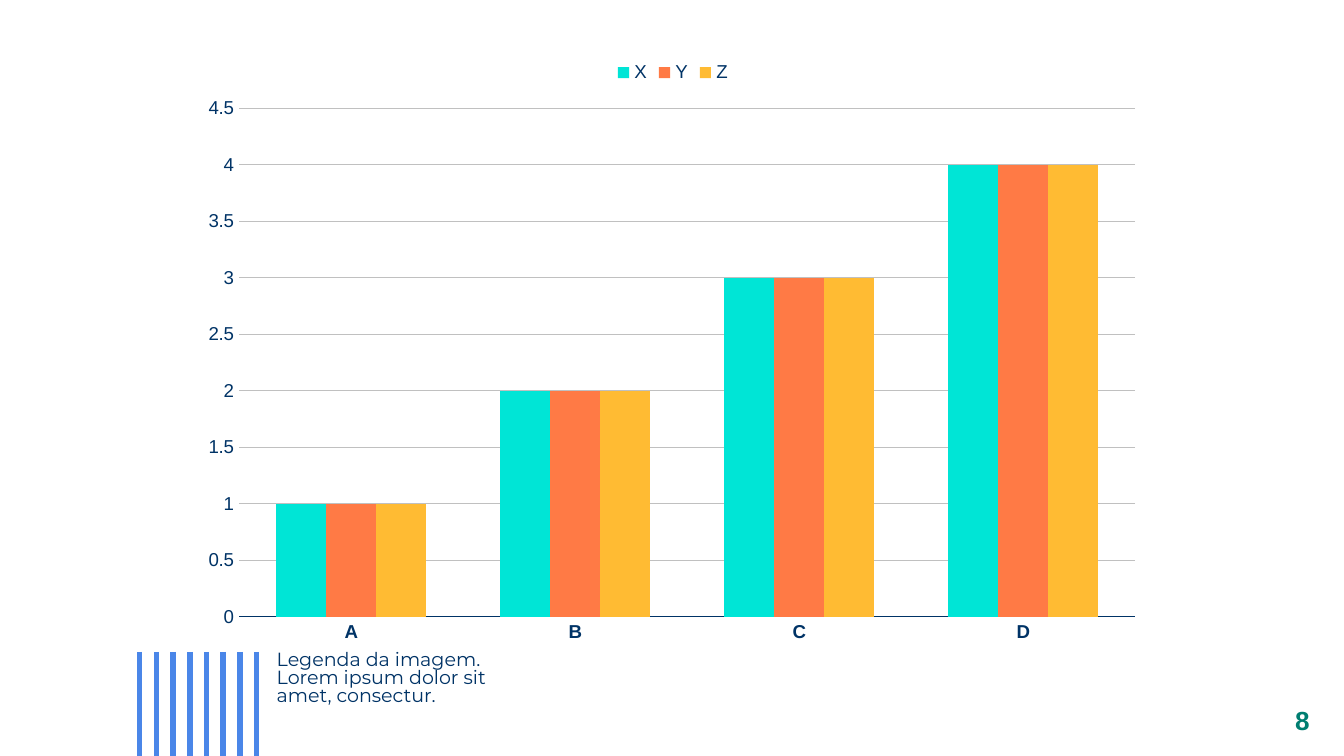
"""Build a slide with a clustered column chart, its caption, a stripe motif and a page number."""
import lxml.etree
import pptx
import pptx.chart.data
import pptx.dml.color
import pptx.enum.chart
import pptx.enum.shapes
import pptx.enum.text
import pptx.oxml.ns
import pptx.util

Cm = pptx.util.Cm
Pt = pptx.util.Pt
RGBColor = pptx.dml.color.RGBColor
qn = pptx.oxml.ns.qn

CATEGORIES = ["A", "B", "C", "D"]
VALUES = [1, 2, 3, 4]
SERIES_COLORS = {
    "X": RGBColor(0x00, 0xE5, 0xD6),
    "Y": RGBColor(0xFF, 0x7A, 0x45),
    "Z": RGBColor(0xFF, 0xBB, 0x33),
}
CAPTION = "Legenda da imagem. Lorem ipsum dolor sit amet, consectur."
PAGE_NUMBER = "8"

NAVY = RGBColor(0x00, 0x33, 0x66)
GREEN = RGBColor(0x00, 0x7E, 0x71)
BLUE = RGBColor(0x4A, 0x86, 0xE8)
GRAY = RGBColor(0xC0, 0xC0, 0xC0)

WIDTH, HEIGHT = 25.4, 14.29
STRIPE_COUNT, STRIPE_FIRST, STRIPE_LAST, STRIPE_TOP = 8, 2.64, 4.85, 12.32
CHART_BOX = (3.61, 0.89, 18.21, 11.58)
PLOT_AREA = {"x": 0.05, "y": 0.1, "w": 0.93, "h": 0.83}
CAPTION_BOX = (5.23, STRIPE_TOP, 4.47, 1.68)
PAGE_BOX = (23.83, 12.95, 1.57, 1.34)


def style_font(font, size=10, color=NAVY, name="Arial", bold=False):
    font.size, font.name, font.bold = Pt(size), name, bold
    font.color.rgb = color


def add_text(slide, text, box, margins=(0, 0, 0, 0), align=None, anchor=None,
             line_spacing=None, space_after=None, **font_format):
    frame = slide.shapes.add_textbox(*map(Cm, box)).text_frame
    frame.word_wrap = True
    frame.vertical_anchor = anchor
    (frame.margin_left, frame.margin_top,
     frame.margin_right, frame.margin_bottom) = map(Cm, margins)
    paragraph = frame.paragraphs[0]
    paragraph.alignment = align
    paragraph.line_spacing = line_spacing
    paragraph.space_after = space_after
    run = paragraph.add_run()
    run.text = text
    style_font(run.font, **font_format)


def add_stripes(slide):
    step = (STRIPE_LAST - STRIPE_FIRST) / (STRIPE_COUNT - 1)
    for index in range(STRIPE_COUNT):
        x = Cm(STRIPE_FIRST + index * step)
        stripe = slide.shapes.add_connector(
            pptx.enum.shapes.MSO_CONNECTOR.STRAIGHT, x, Cm(STRIPE_TOP), x, Cm(HEIGHT))
        stripe.line.color.rgb = BLUE
        stripe.line.width = Pt(3)
        lxml.etree.SubElement(stripe.element.spPr, qn("a:effectLst"))


def place_plot_area(chart):
    plot_area = chart.element.find(".//" + qn("c:plotArea"))
    layout = lxml.etree.Element(qn("c:layout"))
    manual = lxml.etree.SubElement(layout, qn("c:manualLayout"))
    settings = {"layoutTarget": "inner", "xMode": "edge", "yMode": "edge", **PLOT_AREA}
    for tag, value in settings.items():
        lxml.etree.SubElement(manual, qn("c:" + tag)).set("val", str(value))
    plot_area.insert(0, layout)


def add_column_chart(slide):
    chart_data = pptx.chart.data.CategoryChartData()
    chart_data.categories = CATEGORIES
    for name in SERIES_COLORS:
        chart_data.add_series(name, VALUES)
    chart = slide.shapes.add_chart(
        pptx.enum.chart.XL_CHART_TYPE.COLUMN_CLUSTERED,
        *map(Cm, CHART_BOX), chart_data).chart
    chart.has_title = False
    style_font(chart.font)

    chart.has_legend = True
    chart.legend.position = pptx.enum.chart.XL_LEGEND_POSITION.TOP
    chart.legend.include_in_layout = False
    style_font(chart.legend.font)

    columns = chart.plots[0]
    columns.gap_width, columns.overlap, columns.vary_by_categories = 150, 0, False
    for series in columns.series:
        series.format.fill.solid()
        series.format.fill.fore_color.rgb = SERIES_COLORS[series.name]

    for axis in (chart.category_axis, chart.value_axis):
        axis.major_tick_mark = axis.minor_tick_mark = pptx.enum.chart.XL_TICK_MARK.NONE
        style_font(axis.tick_labels.font, bold=axis is chart.category_axis)
    style_font(chart.category_axis.tick_labels.font, bold=True)
    chart.category_axis.format.line.color.rgb = NAVY
    chart.category_axis.format.line.width = Pt(0.25)

    scale = chart.value_axis
    scale.minimum_scale, scale.maximum_scale, scale.major_unit = 0, 4.5, 0.5
    scale.format.line.fill.background()
    scale.major_gridlines.format.line.color.rgb = GRAY
    scale.major_gridlines.format.line.width = Pt(0.75)
    place_plot_area(chart)


def main():
    presentation = pptx.Presentation()
    presentation.slide_width, presentation.slide_height = Cm(WIDTH), Cm(HEIGHT)
    slide = presentation.slides.add_slide(presentation.slide_layouts[6])
    add_stripes(slide)
    add_text(slide, PAGE_NUMBER, PAGE_BOX, margins=(0.25,) * 4,
             align=pptx.enum.text.PP_ALIGN.CENTER,
             anchor=pptx.enum.text.MSO_ANCHOR.MIDDLE,
             size=14, color=GREEN, bold=True)
    add_text(slide, CAPTION, CAPTION_BOX, margins=(0, 0, 0, 0.25),
             line_spacing=0.8, space_after=Pt(10), size=10.2, name="Montserrat")
    add_column_chart(slide)
    presentation.save("out.pptx")


if __name__ == "__main__":
    main()
